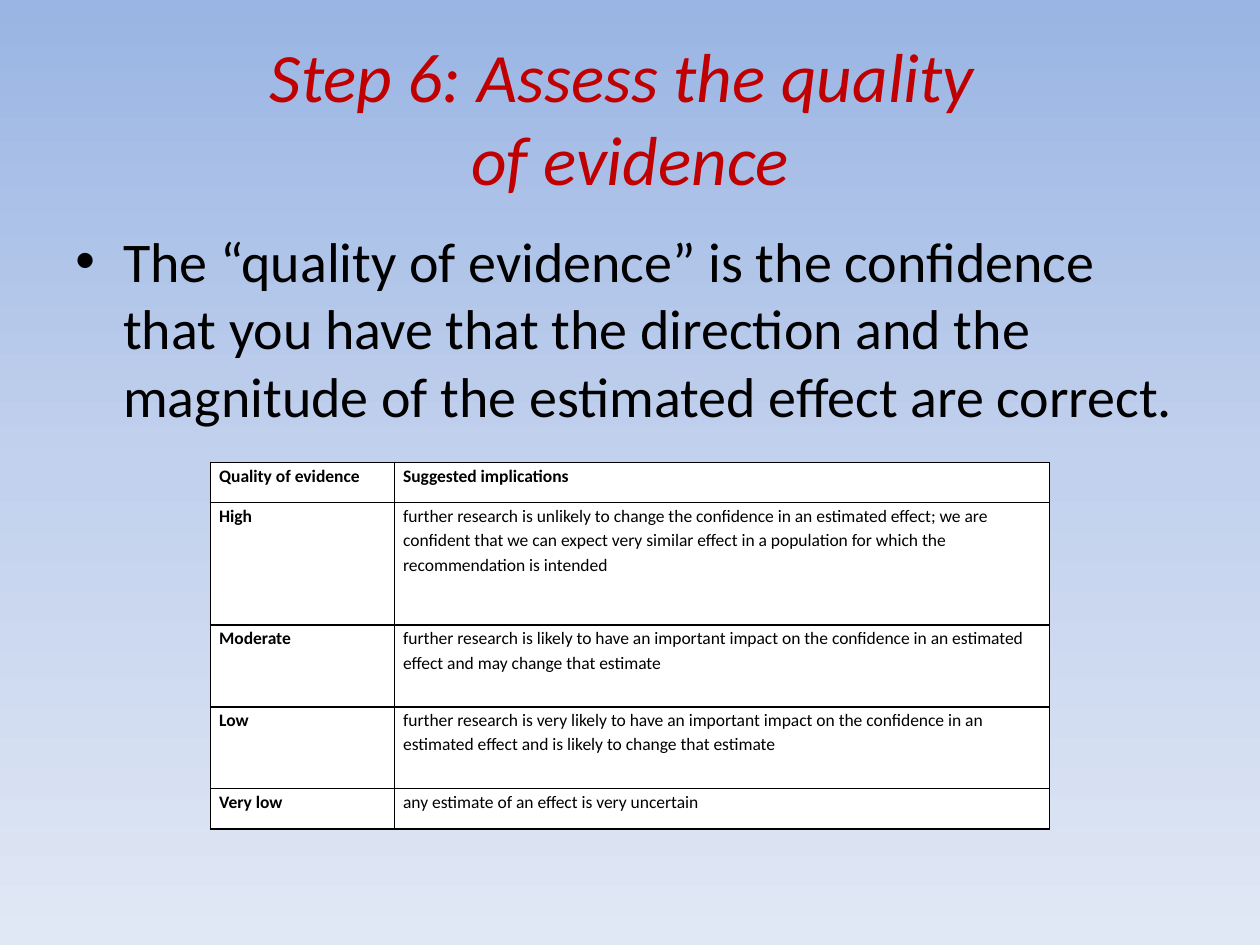
"""Build the slide on assessing the quality of evidence."""
from copy import deepcopy
from dataclasses import dataclass

from lxml import etree
from pptx import Presentation
from pptx.dml.color import RGBColor
from pptx.enum.text import MSO_ANCHOR, MSO_AUTO_SIZE, PP_ALIGN
from pptx.oxml.ns import qn
from pptx.util import Inches, Pt

LEFT, CENTER = PP_ALIGN.LEFT, PP_ALIGN.CENTER
TOP, MIDDLE = MSO_ANCHOR.TOP, MSO_ANCHOR.MIDDLE
NO_FIT = MSO_AUTO_SIZE.NONE


@dataclass(frozen=True)
class Theme:
    font: str = "Calibri"
    title: str = "C00000"
    ink: str = "000000"
    paper: str = "FFFFFF"
    sky: tuple = ((0, "9AB5E4"), (0.5, "C2D1ED"), (1, "E1E8F5"))
    title_size: float = 39.6
    body_size: float = 32
    cell_size: float = 10
    border: float = 1


@dataclass(frozen=True)
class Grade:
    name: str
    meaning: str
    height: float
    head: bool = False


THEME = Theme()
GRADES = (
    Grade("Quality of evidence", "Suggested implications", 0.32, True),
    Grade("High", "further research is unlikely to change the confidence in an "
          "estimated effect; we are confident that we can expect very similar "
          "effect in a population for which the recommendation is intended", 0.97),
    Grade("Moderate", "further research is likely to have an important impact on "
          "the confidence in an estimated effect and may change that estimate", 0.65),
    Grade("Low", "further research is very likely to have an important impact on "
          "the confidence in an estimated effect and is likely to change that "
          "estimate", 0.65),
    Grade("Very low", "any estimate of an effect is very uncertain", 0.32),
)
COLUMNS = (1.46, 5.2)


def write(frame, text: str, *, size: float, color: str = THEME.ink,
          bold: bool = False, italic: bool = False, align=LEFT,
          spacing: float = 1, before: float = 0):
    para = frame.paragraphs[0]
    para.text = text
    para.alignment = align
    para.line_spacing = spacing
    para.space_before = Pt(before)
    for run in para.runs:
        font = run.font
        font.name, font.size = THEME.font, Pt(size)
        font.bold, font.italic = bold, italic
        font.color.rgb = RGBColor.from_string(color)
    for line in para._p.findall(qn("a:br")):
        line.append(deepcopy(para.runs[0]._r.rPr))
    return para


def paint_sky(slide) -> None:
    fill = slide.background.fill
    fill.gradient()
    fill.gradient_angle = 270
    stops = slide._element.xpath(".//a:gsLst")[0]
    stops.insert(1, deepcopy(stops[0]))
    for stop, (place, color) in zip(fill.gradient_stops, THEME.sky):
        stop.position = place
        stop.color.rgb = RGBColor.from_string(color)


def add_title(slide, text: str) -> None:
    title = slide.shapes.title
    title.left, title.top = Inches(0.5), Inches(0.3)
    title.width, title.height = Inches(9), Inches(1.25)
    frame = title.text_frame
    frame.auto_size, frame.vertical_anchor = NO_FIT, MIDDLE
    write(frame, text, size=THEME.title_size, color=THEME.title,
          italic=True, align=CENTER)


def add_bullet(slide, text: str) -> None:
    box = slide.shapes.add_textbox(Inches(0.5), Inches(1.75), Inches(9), Inches(4.95))
    frame = box.text_frame
    frame.word_wrap = True
    para = write(frame, text, size=THEME.body_size, before=0.2 * THEME.body_size)
    props = para._p.get_or_add_pPr()
    indent = Inches(0.38)
    props.set("marL", str(indent))
    props.set("indent", str(-indent))
    etree.SubElement(props, qn("a:buFont"), typeface="Arial")
    etree.SubElement(props, qn("a:buChar"), char="•")


def add_borders(cell) -> None:
    props = cell._tc.get_or_add_tcPr()
    for side in ("lnL", "lnR", "lnT", "lnB"):
        line = etree.SubElement(props, qn(f"a:{side}"), w=str(Pt(THEME.border)))
        fill = etree.SubElement(line, qn("a:solidFill"))
        etree.SubElement(fill, qn("a:srgbClr"), val=THEME.ink)


def fill_cell(cell, text: str, bold: bool) -> None:
    cell.margin_left = cell.margin_right = Inches(0.07)
    cell.margin_top = cell.margin_bottom = 0
    cell.vertical_anchor = TOP
    add_borders(cell)
    cell.fill.solid()
    cell.fill.fore_color.rgb = RGBColor.from_string(THEME.paper)
    write(cell.text_frame, text, size=THEME.cell_size, bold=bold, spacing=1.15)


def add_grades(slide, grades: tuple[Grade, ...]) -> None:
    height = sum(grade.height for grade in grades)
    table = slide.shapes.add_table(
        len(grades), len(COLUMNS), Inches(1.67), Inches(3.67),
        Inches(sum(COLUMNS)), Inches(height)).table
    table.horz_banding = False
    for column, width in zip(table.columns, COLUMNS):
        column.width = Inches(width)
    for row, grade in zip(table.rows, grades):
        row.height = Inches(grade.height)
        fill_cell(row.cells[0], grade.name, True)
        fill_cell(row.cells[1], grade.meaning, grade.head)


def main() -> None:
    deck = Presentation()
    deck.slide_width, deck.slide_height = Inches(10), Inches(7.5)
    slide = deck.slides.add_slide(deck.slide_layouts[5])
    paint_sky(slide)
    add_title(slide, "Step 6: Assess the quality \nof evidence")
    add_bullet(slide, "The “quality of evidence” is the confidence that you have "
               "that the direction and the magnitude of the estimated effect "
               "are correct.")
    add_grades(slide, GRADES)
    deck.save("out.pptx")


if __name__ == "__main__":
    main()
